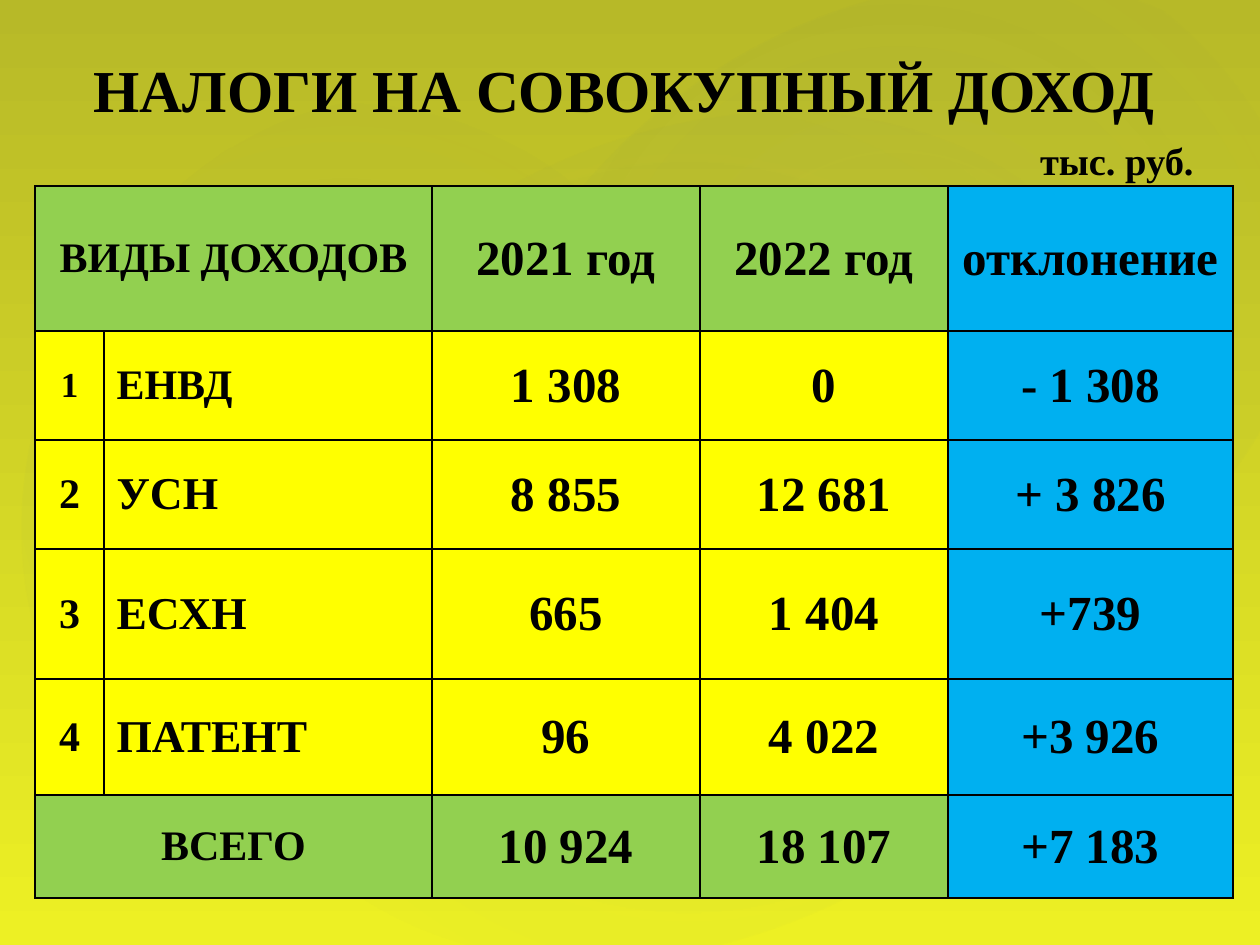
import pptx
import pptx.dml.color
import pptx.enum.shapes
import pptx.enum.text
import pptx.oxml
import pptx.oxml.ns
import pptx.util

SCALE = 914400 / 126
FONT = "Times New Roman"
BLACK, GREEN, YELLOW, BLUE = "000000", "92D050", "FFFF00", "00B0F0"
CENTER = pptx.enum.text.PP_ALIGN.CENTER
LEFT = pptx.enum.text.PP_ALIGN.LEFT
RIGHT = pptx.enum.text.PP_ALIGN.RIGHT
MIDDLE = pptx.enum.text.MSO_ANCHOR.MIDDLE
NS = pptx.oxml.ns.nsdecls("a")

COLUMNS = [69, 328, 268, 248, 285]
ROWS = [145, 109, 109, 130, 116, 103]
TAXES = [
    ["ВИДЫ ДОХОДОВ", "", "2021 год", "2022 год", "отклонение"],
    ["1", "ЕНВД", "1 308", "0", "- 1 308"],
    ["2", "УСН", "8 855", "12 681", "+ 3 826"],
    ["3", "ЕСХН", "665", "1 404", "+739"],
    ["4", "ПАТЕНТ", "96", "4 022", "+3 926"],
    ["ВСЕГО", "", "10 924", "18 107", "+7 183"],
]
LABEL_SIZES = [(24, 24), (20, 24), (24, 26), (24, 26), (24, 26), (24, 24)]
GLOWS = [
    ((189, 144, 998, 786), 328.7, 7),
    ((-38, 161, 764, 617), 294.3, 8),
    ((451, 16, 893, 655), 328.7, 8),
]


def px(length):
    """Turn pixels into EMU."""
    return pptx.util.Emu(round(length * SCALE))


def color(value):
    """Turn a hex string into a colour."""
    return pptx.dml.color.RGBColor.from_string(value)


def write(frame, text, size, align):
    """Write one bold black run into a text frame."""
    paragraph = frame.paragraphs[0]
    paragraph.alignment = align
    run = paragraph.add_run()
    run.text = text
    run.font.name = FONT
    run.font.size = pptx.util.Pt(size)
    run.font.bold = True
    run.font.color.rgb = color(BLACK)


def paint_background(slide):
    """Shade the background from olive down to yellow."""
    fill = slide.background.fill
    fill.gradient()
    fill.gradient_angle = 270
    for stop, (position, shade) in zip(fill.gradient_stops, [(0, "B7B928"), (1, "EDF024")]):
        stop.position = position
        stop.color.rgb = color(shade)


def add_glow(slide, box, rotation, opacity):
    """Add a faint ellipse that fades out from its centre."""
    glow = slide.shapes.add_shape(pptx.enum.shapes.MSO_SHAPE.OVAL, *map(px, box))
    glow.rotation = rotation
    glow.shadow.inherit = False
    glow.line.fill.background()
    fade = pptx.oxml.parse_xml(
        f'<a:gradFill {NS} rotWithShape="1"><a:gsLst>'
        f'<a:gs pos="0"><a:srgbClr val="ACB3B6"><a:alpha val="{opacity * 1000}"/></a:srgbClr></a:gs>'
        '<a:gs pos="58000"><a:srgbClr val="2F5897"><a:alpha val="0"/></a:srgbClr></a:gs>'
        '</a:gsLst><a:path path="circle">'
        '<a:fillToRect l="50000" t="50000" r="50000" b="50000"/></a:path></a:gradFill>')
    glow._element.spPr.find(pptx.oxml.ns.qn("a:prstGeom")).addnext(fade)


def style_cell(cell, fill):
    """Give a cell its fill, thin black borders and middle anchor."""
    cell.vertical_anchor = MIDDLE
    properties = cell._tc.get_or_add_tcPr()
    for side in ("lnL", "lnR", "lnT", "lnB"):
        properties.append(pptx.oxml.parse_xml(
            f'<a:{side} {NS} w="12700"><a:solidFill><a:srgbClr val="{BLACK}"/></a:solidFill></a:{side}>'))
    cell.fill.solid()
    cell.fill.fore_color.rgb = color(fill)


def add_tax_table(slide):
    """Add the table of taxes with its merged heading and total."""
    frame = slide.shapes.add_table(
        len(ROWS), len(COLUMNS), px(35), px(186), px(sum(COLUMNS)), px(sum(ROWS)))
    table = frame.table
    for column, width in zip(table.columns, COLUMNS):
        column.width = px(width)
    for row, height in zip(table.rows, ROWS):
        row.height = px(height)
    last = len(ROWS) - 1
    for r, values in enumerate(TAXES):
        band = GREEN if r in (0, last) else YELLOW
        sizes = [*LABEL_SIZES[r], 28, 28, 28]
        for c, value in enumerate(values):
            cell = table.cell(r, c)
            style_cell(cell, BLUE if c == 4 else band)
            if value:
                write(cell.text_frame, value, sizes[c], LEFT if c == 1 else CENTER)
    for r in (0, last):
        table.cell(r, 0).merge(table.cell(r, 1))


def set_title(slide, text):
    """Place the title in front and write it."""
    title = slide.shapes.title
    title.left, title.top, title.width, title.height = map(px, (64, 26, 1121, 105))
    frame = title.text_frame
    frame.auto_size = pptx.enum.text.MSO_AUTO_SIZE.NONE
    frame.vertical_anchor = pptx.enum.text.MSO_ANCHOR.BOTTOM
    write(frame, text, 34, CENTER)
    slide.shapes._spTree.append(title._element)


def add_unit(slide, text):
    """Add the unit of measure above the table."""
    unit = slide.shapes.add_textbox(*map(px, (1002, 131, 204, 59)))
    unit.text_frame.word_wrap = True
    unit.text_frame.auto_size = pptx.enum.text.MSO_AUTO_SIZE.SHAPE_TO_FIT_TEXT
    write(unit.text_frame, text, 22, RIGHT)


def main():
    """Build the slide and save it."""
    deck = pptx.Presentation()
    deck.slide_width, deck.slide_height = px(1260), px(945)
    slide = deck.slides.add_slide(deck.slide_layouts[5])
    paint_background(slide)
    for box, rotation, opacity in GLOWS:
        add_glow(slide, box, rotation, opacity)
    add_tax_table(slide)
    set_title(slide, "НАЛОГИ НА СОВОКУПНЫЙ ДОХОД")
    add_unit(slide, "тыс. руб.")
    deck.save("out.pptx")


if __name__ == "__main__":
    main()
